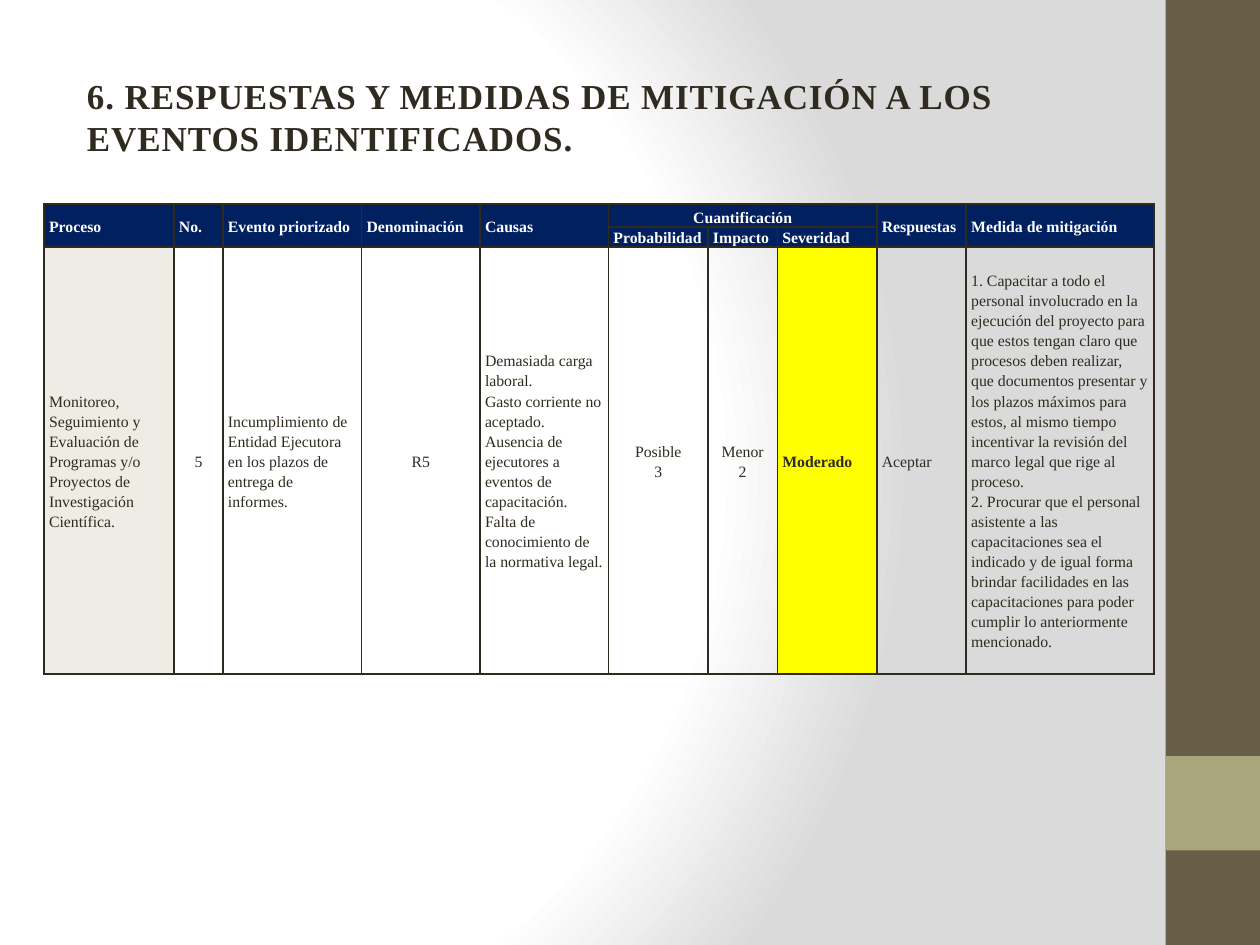
from copy import deepcopy

from pptx import Presentation
from pptx.dml.color import RGBColor
from pptx.enum import shapes, text
from pptx.oxml import parse_xml
from pptx.oxml.ns import nsdecls, qn
from pptx.util import Inches, Pt

THEME = {
    "font": "Times New Roman", "title_size": 20, "table_size": 9, "border_width": 1,
    "ink": "2F2B20", "white": "FFFFFF", "shade": "DADADA", "navy": "002060",
    "brown": "675E47", "olive": "A9A57C", "cream": "EEEDE5", "yellow": "FFFF00",
}

# Content: \n starts a paragraph, \v breaks a line
TITLE = "6. RESPUESTAS Y MEDIDAS DE MITIGACIÓN A LOS EVENTOS IDENTIFICADOS."
HEADERS = ["Proceso", "No.", "Evento priorizado", "Denominación", "Causas",
           "Cuantificación", None, None, "Respuestas", "Medida de mitigación"]
SUBHEADERS = [None] * 5 + ["Probabilidad", "Impacto", "Severidad"] + [None] * 2
EVENT = [
    "Monitoreo, Seguimiento y Evaluación de Programas y/o Proyectos de "
    "Investigación Científica.",
    "5",
    "Incumplimiento de Entidad Ejecutora en los plazos de entrega de informes.",
    "R5",
    "Demasiada carga laboral.\vGasto corriente no aceptado.\v"
    "Ausencia de ejecutores a eventos de capacitación.\v"
    "Falta de conocimiento de la normativa legal.",
    "Posible\n3",
    "Menor\n2",
    "Moderado",
    "Aceptar",
    "1. Capacitar a todo el personal involucrado en la ejecución del proyecto para que "
    "estos tengan claro que procesos deben realizar, que documentos presentar y los "
    "plazos máximos para estos, al mismo tiempo incentivar la revisión del marco legal "
    "que rige al proceso.\v"
    "2. Procurar que el personal asistente a las capacitaciones sea el indicado y de "
    "igual forma brindar facilidades en las capacitaciones para poder cumplir lo "
    "anteriormente mencionado.",
]
ROWS = [HEADERS, SUBHEADERS, EVENT]
COLUMN_WIDTHS = [1.03, 0.39, 1.1, 0.94, 1.02, 0.79, 0.55, 0.79, 0.71, 1.49]
ROW_HEIGHTS = [0.18, 0.16, 3.39]
TABLE_LEFT, TABLE_TOP = 0.35, 1.62
GROUP = (5, 7)  # first and last column under "Cuantificación"
SEVERITY = 7
CENTERED = {(0, 5), (2, 1), (2, 3), (2, 5), (2, 6)}
EVENT_FILLS = {0: "cream", SEVERITY: "yellow"}
SIDEBAR = [((9.25, 0, 0.75, 7.5), "brown"), ((9.25, 6, 0.75, 0.75), "olive")]


def color(name):
    return RGBColor.from_string(THEME[name])


def set_all(target, values):
    for name, value in values.items():
        setattr(target, name, value)


def format_run(run, size, ink, bold):
    set_all(run.font, {"name": THEME["font"], "size": Pt(size), "bold": bold})
    run.font.color.rgb = color(ink)


def add_background(slide):
    stops = "".join(
        f'<a:gs pos="{position * 1000}"><a:srgbClr val="{THEME[name]}"/></a:gs>'
        for position, name in [(0, "white"), (75, "white"), (100, "shade")])
    slide.element.cSld.insert(0, parse_xml(
        f'<p:bg {nsdecls("p", "a")}><p:bgPr><a:gradFill rotWithShape="1">'
        f'<a:gsLst>{stops}</a:gsLst><a:path path="circle">'
        '<a:fillToRect l="20000" t="50000" r="100000" b="50000"/></a:path>'
        '</a:gradFill><a:effectLst/></p:bgPr></p:bg>'))


def add_sidebar(slide):
    for box, name in SIDEBAR:
        shape = slide.shapes.add_shape(shapes.MSO_SHAPE.RECTANGLE, *map(Inches, box))
        shape.shadow.inherit = False
        shape.fill.solid()
        shape.fill.fore_color.rgb = color(name)
        shape.line.fill.background()


def add_title(slide):
    title = slide.shapes.title
    set_all(title, {"left": Inches(0.59), "top": Inches(0.29),
                    "width": Inches(8.5), "height": Inches(1.02)})
    set_all(title.text_frame, {"text": TITLE, "word_wrap": True,
                               "auto_size": text.MSO_AUTO_SIZE.NONE,
                               "vertical_anchor": text.MSO_ANCHOR.BOTTOM})
    paragraph = title.text_frame.paragraphs[0]
    paragraph.alignment = text.PP_ALIGN.LEFT
    run = paragraph.runs[0]
    format_run(run, THEME["title_size"], "ink", True)
    run.font._element.set("spc", "50")


def add_borders(cell):
    properties = cell._tc.get_or_add_tcPr()
    for edge in ("lnL", "lnR", "lnT", "lnB"):
        properties.append(parse_xml(
            f'<a:{edge} {nsdecls("a")} w="{Pt(THEME["border_width"])}"><a:solidFill>'
            f'<a:srgbClr val="{THEME["ink"]}"/></a:solidFill></a:{edge}>'))


def format_cell(cell, row, column, content):
    is_header = row < 2
    anchor = text.MSO_ANCHOR.BOTTOM if (row, column) == (0, GROUP[0]) else text.MSO_ANCHOR.MIDDLE
    set_all(cell, {"margin_left": Inches(0.04), "margin_right": Inches(0.04),
                   "margin_top": 0, "margin_bottom": 0, "vertical_anchor": anchor})
    add_borders(cell)
    fill = "navy" if is_header else EVENT_FILLS.get(column)
    if fill:
        cell.fill.solid()
        cell.fill.fore_color.rgb = color(fill)
    else:
        cell.fill.background()
    if content is None:
        return
    cell.text_frame.text = content
    align = text.PP_ALIGN.CENTER if (row, column) in CENTERED else text.PP_ALIGN.LEFT
    for paragraph in cell.text_frame.paragraphs:
        set_all(paragraph, {"alignment": align, "line_spacing": 1.15})
        for run in paragraph.runs:
            format_run(run, THEME["table_size"], "white" if is_header else "ink",
                       is_header or column == SEVERITY)
        # Line breaks take the type size of the text around them
        for line_break in paragraph._p.findall(qn("a:br")):
            line_break.append(deepcopy(paragraph.runs[0].font._element))


def add_risk_table(slide):
    frame = slide.shapes.add_table(
        len(ROWS), len(COLUMN_WIDTHS), Inches(TABLE_LEFT), Inches(TABLE_TOP),
        Inches(sum(COLUMN_WIDTHS)), Inches(sum(ROW_HEIGHTS)))
    table = frame.table
    set_all(table, {"first_row": False, "horz_banding": False})
    for column, width in zip(table.columns, COLUMN_WIDTHS):
        column.width = Inches(width)
    for row, height in zip(table.rows, ROW_HEIGHTS):
        row.height = Inches(height)
    for row, contents in enumerate(ROWS):
        for column, content in enumerate(contents):
            format_cell(table.cell(row, column), row, column, content)
    # Headers span both rows, except the grouped columns
    first, last = GROUP
    table.cell(0, first).merge(table.cell(0, last))
    for column in range(len(COLUMN_WIDTHS)):
        if not first <= column <= last:
            table.cell(0, column).merge(table.cell(1, column))


def main():
    presentation = Presentation()
    set_all(presentation, {"slide_width": Inches(10), "slide_height": Inches(7.5)})
    slide = presentation.slides.add_slide(presentation.slide_layouts[5])
    add_background(slide)
    add_sidebar(slide)
    add_title(slide)
    add_risk_table(slide)
    presentation.save("out.pptx")


if __name__ == "__main__":
    main()
